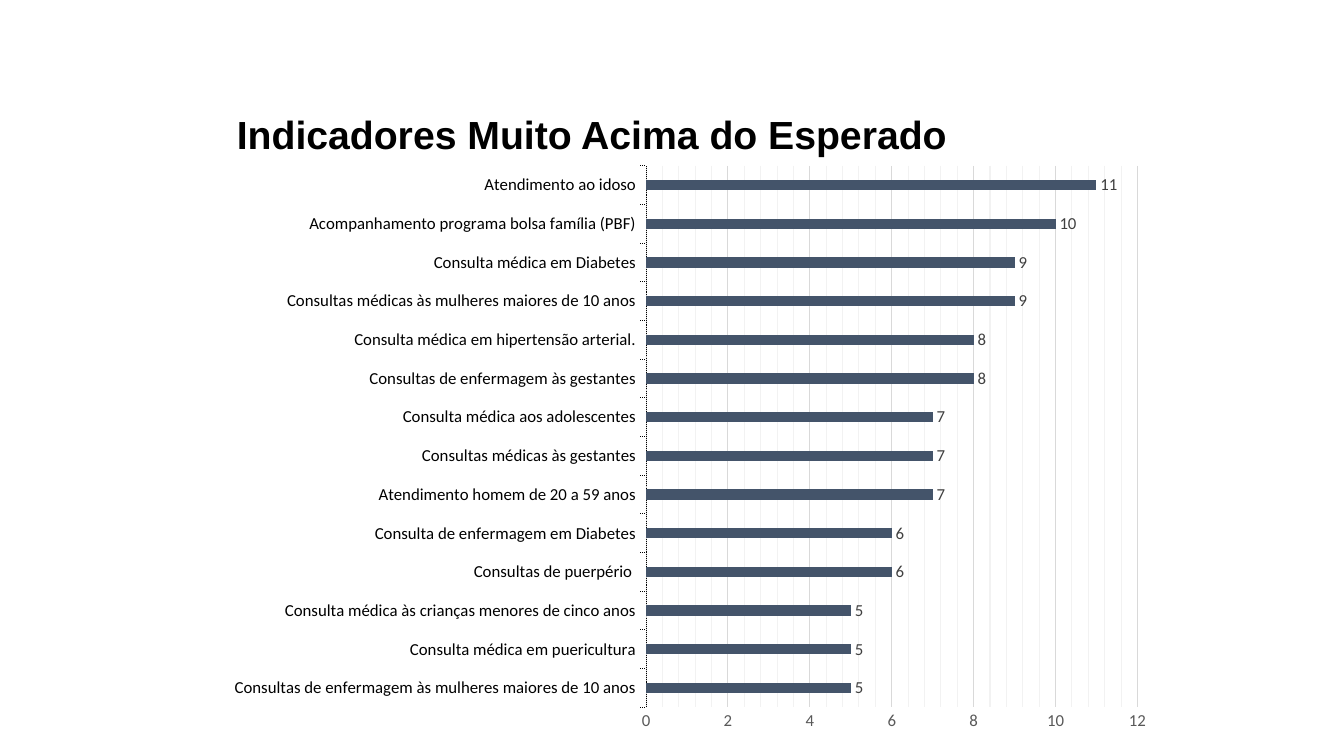
"""Build the slide of indicators far above expectation, with its bar chart."""
from lxml.etree import SubElement
from pptx import Presentation
from pptx.chart.data import CategoryChartData
from pptx.dml.color import RGBColor
from pptx.enum.chart import XL_CHART_TYPE, XL_LABEL_POSITION, XL_TICK_MARK
from pptx.enum.dml import MSO_LINE
from pptx.enum.text import MSO_ANCHOR, PP_ALIGN
from pptx.oxml.ns import qn
from pptx.util import Pt

TITLE = "Indicadores Muito Acima do Esperado"
INDICATORS = [
    ("Consultas de enfermagem às mulheres maiores de 10 anos", 5),
    ("Consulta médica em puericultura", 5),
    ("Consulta médica às crianças menores de cinco anos", 5),
    ("Consultas de puerpério ", 6),
    ("Consulta de enfermagem em Diabetes", 6),
    ("Atendimento homem de 20 a 59 anos", 7),
    ("Consultas médicas às gestantes", 7),
    ("Consulta médica aos adolescentes", 7),
    ("Consultas de enfermagem às gestantes", 8),
    ("Consulta médica em hipertensão arterial.", 8),
    ("Consultas médicas às mulheres maiores de 10 anos", 9),
    ("Consulta médica em Diabetes", 9),
    ("Acompanhamento programa bolsa família (PBF)", 10),
    ("Atendimento ao idoso", 11),
]
PLOT_AREA = {"x": 0.46, "y": 0.02, "w": 0.52, "h": 0.92}

BLACK = RGBColor(0x00, 0x00, 0x00)
SLATE = RGBColor(0x44, 0x54, 0x6A)
LABEL_GRAY = RGBColor(0x40, 0x40, 0x40)
AXIS_GRAY = RGBColor(0x59, 0x59, 0x59)
MAJOR_GRAY = RGBColor(0xD9, 0xD9, 0xD9)
MINOR_GRAY = RGBColor(0xF2, 0xF2, 0xF2)


def set_font(font, name, size, color, bold=False):
    font.name = name
    font.size = Pt(size)
    font.bold = bold
    font.color.rgb = color


def set_line(line, color):
    line.color.rgb = color
    line.width = Pt(0.75)


def color_minor_gridlines(axis, color):
    axis.has_minor_gridlines = True
    gridlines = axis._element.find(qn("c:minorGridlines"))
    properties = SubElement(gridlines, qn("c:spPr"))
    line = SubElement(properties, qn("a:ln"), w=str(Pt(0.75)))
    fill = SubElement(line, qn("a:solidFill"))
    SubElement(fill, qn("a:srgbClr"), val=str(color))


def place_plot(chart):
    plot_area = chart.plots[0]._element.getparent()
    for old_layout in plot_area.findall(qn("c:layout")):
        plot_area.remove(old_layout)
    layout = SubElement(plot_area, qn("c:layout"))
    plot_area.insert(0, layout)
    manual = SubElement(layout, qn("c:manualLayout"))
    settings = {"layoutTarget": "inner", "xMode": "edge", "yMode": "edge", **PLOT_AREA}
    for tag, value in settings.items():
        SubElement(manual, qn(f"c:{tag}")).set("val", str(value))


def add_title(slide):
    title = slide.shapes.title
    title.left, title.top, title.width, title.height = Pt(162), Pt(75), Pt(528), Pt(41)
    frame = title.text_frame
    frame.text = TITLE
    frame.word_wrap = False
    frame.vertical_anchor = MSO_ANCHOR.TOP
    para = frame.paragraphs[0]
    para.alignment = PP_ALIGN.LEFT
    para.line_spacing = 1.0
    set_font(para.runs[0].font, "Arial", 28, BLACK, bold=True)


def add_indicator_chart(slide):
    data = CategoryChartData()
    data.categories = [name for name, count in INDICATORS]
    data.add_series("Series 1", [count for name, count in INDICATORS])
    chart = slide.shapes.add_chart(
        XL_CHART_TYPE.BAR_CLUSTERED, Pt(151), Pt(110), Pt(675), Pt(420.5), data
    ).chart
    chart.has_legend = False
    chart.has_title = False
    set_font(chart.font, "Calibri", 10, BLACK)
    place_plot(chart)

    plot = chart.plots[0]
    plot.gap_width = 269
    plot.overlap = -48
    plot.vary_by_categories = False
    fill = plot.series[0].format.fill
    fill.solid()
    fill.fore_color.rgb = SLATE
    plot.has_data_labels = True
    labels = plot.data_labels
    labels.show_value = True
    labels.position = XL_LABEL_POSITION.OUTSIDE_END
    set_font(labels.font, "Calibri", 12, LABEL_GRAY)

    names = chart.category_axis
    names.major_tick_mark = XL_TICK_MARK.OUTSIDE
    names.minor_tick_mark = XL_TICK_MARK.NONE
    set_font(names.tick_labels.font, "Calibri", 12, BLACK)
    set_line(names.format.line, BLACK)
    names.format.line.dash_style = MSO_LINE.ROUND_DOT

    counts = chart.value_axis
    counts.minimum_scale, counts.maximum_scale = 0, 12
    counts.major_unit, counts.minor_unit = 2, 0.4
    counts.major_tick_mark = counts.minor_tick_mark = XL_TICK_MARK.NONE
    counts.has_major_gridlines = True
    set_line(counts.major_gridlines.format.line, MAJOR_GRAY)
    color_minor_gridlines(counts, MINOR_GRAY)
    set_font(counts.tick_labels.font, "Calibri", 12, AXIS_GRAY)
    counts.format.line.fill.background()


def main():
    deck = Presentation()
    deck.slide_width, deck.slide_height = Pt(960), Pt(540)
    slide = deck.slides.add_slide(deck.slide_layouts.get_by_name("Title Only"))
    add_title(slide)
    add_indicator_chart(slide)
    deck.save("out.pptx")


if __name__ == "__main__":
    main()
